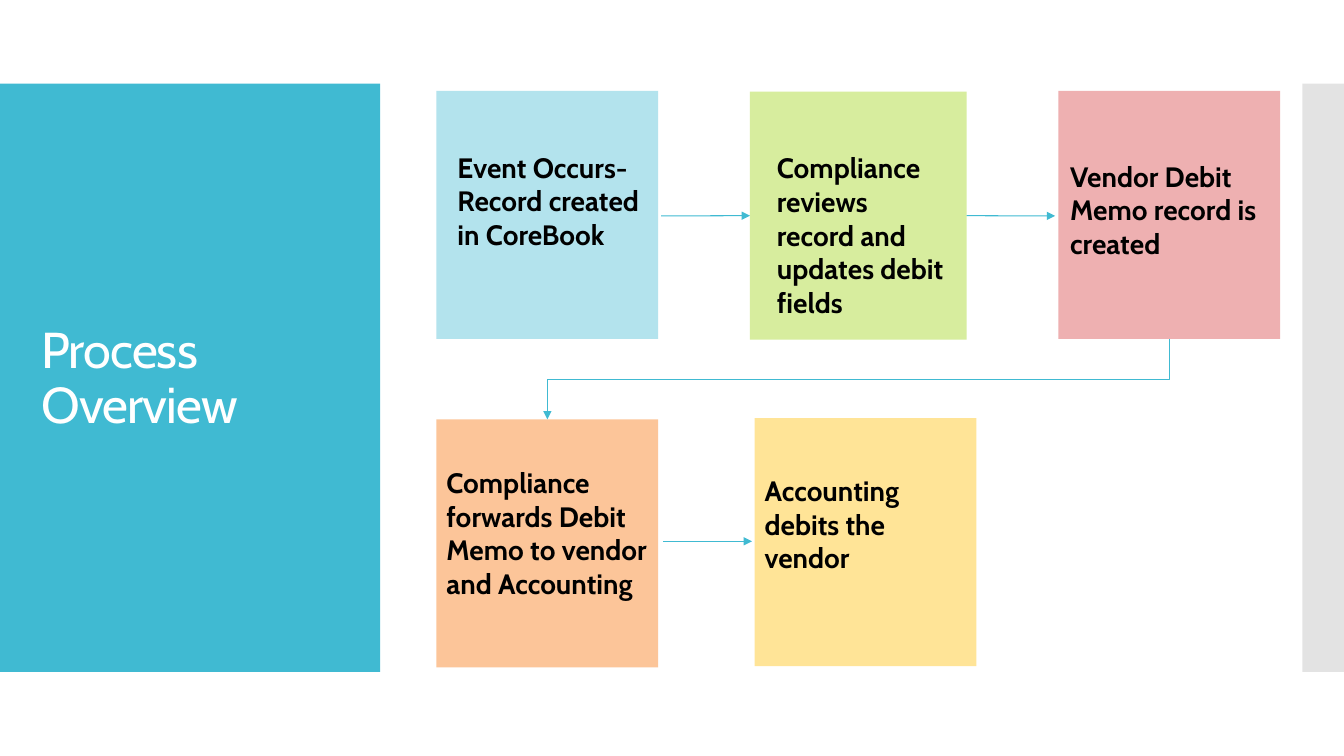
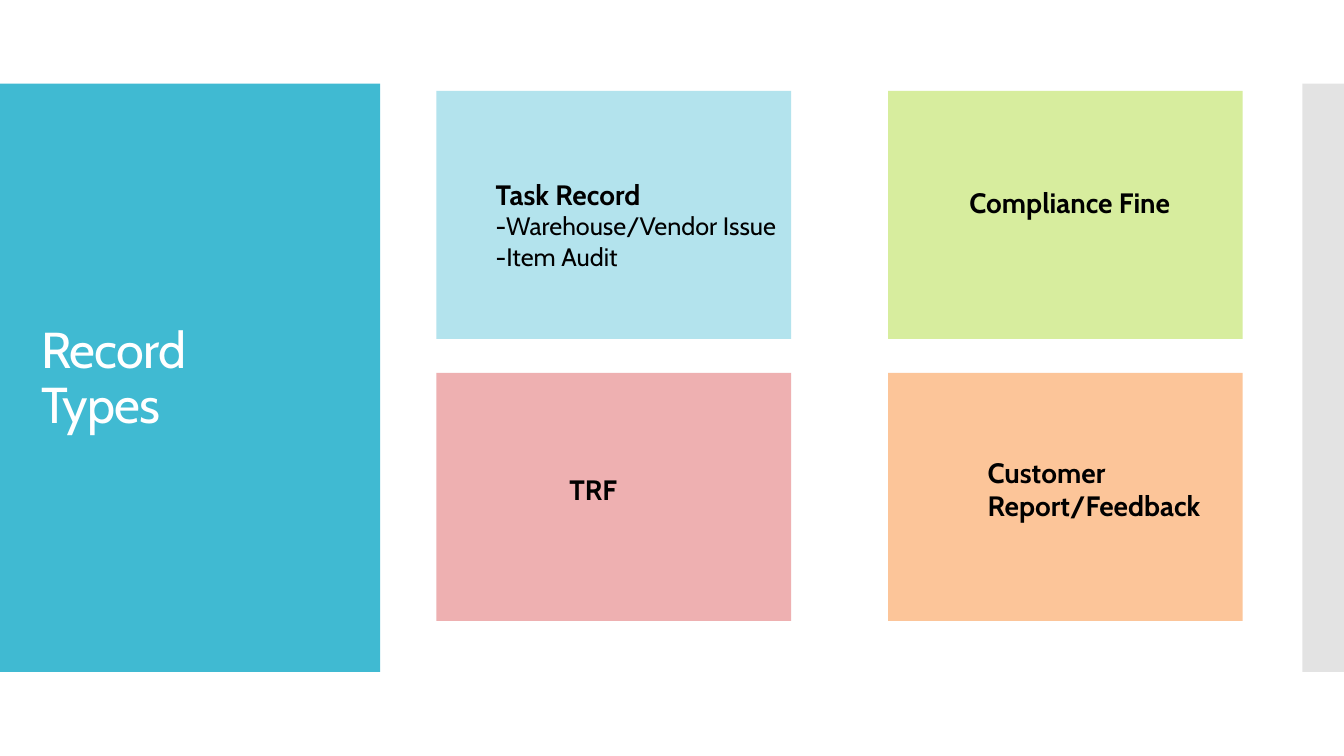
from typing import NamedTuple, Optional

from lxml.etree import SubElement
from pptx import Presentation
from pptx.dml.color import RGBColor
from pptx.enum.shapes import MSO_CONNECTOR, MSO_SHAPE
from pptx.enum.text import MSO_ANCHOR
from pptx.oxml.ns import qn
from pptx.util import Cm, Pt

# Shared look
FONT = "Cabin"
TEAL, GREY, WHITE, BLACK = "40BAD2", "C8C8C8", "FFFFFF", "000000"
SKY, LIME, ROSE, PEACH, SAND = "B3E3ED", "D7ED9E", "EEB0B1", "FCC599", "FFE497"
WIDE, HIGH = 33.87, 19.05
BAND_TOP, BAND_HIGH = 2.11, 14.82
LEFT, TOP, TALL = 11, 2.29, 6.25


class Area(NamedTuple):
    x: float
    y: float
    w: float
    h: float


class Line(NamedTuple):
    text: str
    size: float = 20
    bold: bool = True


class Card(NamedTuple):
    area: Area
    fill: str
    note: Area
    lines: list[Line]


class Joint(NamedTuple):
    shape: object
    side: int


def paint(color, code: str) -> None:
    color.rgb = RGBColor.from_string(code)


def add_rect(slide, area: Area, fill: str, alpha: Optional[int] = None):
    rect = slide.shapes.add_shape(MSO_SHAPE.RECTANGLE, *map(Cm, area))
    rect.shadow.inherit = False
    rect.line.fill.background()
    rect.fill.solid()
    paint(rect.fill.fore_color, fill)
    if alpha is not None:
        tone = rect._element.spPr.find(qn("a:solidFill"))[0]
        SubElement(tone, qn("a:alpha"), val=str(alpha * 1000))
    return rect


def add_text(slide, area: Area, lines: list[Line], *, color: str = BLACK,
             anchor=MSO_ANCHOR.TOP, leading: float = 1.0, track: int = 0) -> None:
    frame = slide.shapes.add_textbox(*map(Cm, area)).text_frame
    frame.word_wrap = True
    frame.vertical_anchor = anchor
    for num, line in enumerate(lines):
        para = frame.add_paragraph() if num else frame.paragraphs[0]
        para.line_spacing = leading
        run = para.add_run()
        run.text = line.text
        run.font.name, run.font.size, run.font.bold = FONT, Pt(line.size), line.bold
        paint(run.font.color, color)
        if track:
            run.font._element.set("spc", str(track))


def add_arrow(slide, start: tuple, end: tuple, *, tail: Optional[Joint] = None,
              head: Optional[Joint] = None, bent: bool = False) -> None:
    kind = MSO_CONNECTOR.ELBOW if bent else MSO_CONNECTOR.STRAIGHT
    link = slide.shapes.add_connector(kind, *map(Cm, (*start, *end)))
    if tail:
        link.begin_connect(tail.shape, tail.side)
    if head:
        link.end_connect(head.shape, head.side)
    link.line.width = Pt(0.75)
    paint(link.line.color, TEAL)
    props = link._element.spPr
    SubElement(props.find(qn("a:ln")), qn("a:tailEnd"), type="triangle")
    SubElement(props, qn("a:effectLst"))
    if bent:
        # Turn the elbow so that it leaves and arrives vertically
        (x1, y1), (x2, y2) = start, end
        wide, high = abs(x2 - x1), abs(y2 - y1)
        link.left, link.top = Cm((x1 + x2 - high) / 2), Cm((y1 + y2 - wide) / 2)
        link.width, link.height = Cm(high), Cm(wide)
        frame = props.find(qn("a:xfrm"))
        frame.attrib.pop("flipH", None)
        frame.set("rot", "5400000")


def add_page(deck, title: str, width: float):
    slide = deck.slides.add_slide(deck.slide_layouts[6])
    add_rect(slide, Area(0, BAND_TOP, 9.58, BAND_HIGH), TEAL)
    add_rect(slide, Area(32.82, BAND_TOP, WIDE - 32.82, BAND_HIGH), GREY, alpha=50)
    add_text(slide, Area(0.79, 3.18, width, 12.78), [Line(title, 36, False)],
             color=WHITE, anchor=MSO_ANCHOR.MIDDLE, leading=0.9, track=-60)
    return slide


def add_cards(slide, cards: list[Card]) -> list:
    rects = [add_rect(slide, card.area, card.fill) for card in cards]
    for card in cards:
        add_text(slide, card.note, card.lines)
    return rects


def add_flow(deck) -> None:
    slide = add_page(deck, "Process Overview", 5.74)
    wide = 5.59
    third, fourth = Area(26.67, TOP, wide, TALL), Area(LEFT, 10.57, wide, TALL)
    steps = [
        Card(Area(LEFT, TOP, wide, TALL), SKY, Area(11.28, 3.66, 5.38, 3.58),
             [Line("Event Occurs-Record created in CoreBook")]),
        Card(Area(18.9, 2.31, 5.46, TALL), LIME, Area(19.33, 3.68, 4.78, 4.52),
             [Line("Compliance reviews record and updates debit fields")]),
        Card(third, ROSE, Area(26.72, 3.89, 5.33, 2.82),
             [Line("Vendor Debit Memo record is created")]),
        Card(fourth, PEACH, Area(LEFT, 11.61, wide, 3.68),
             [Line("Compliance forwards Debit Memo to vendor and Accounting")]),
        Card(Area(19.02, 10.54, wide, TALL), SAND, Area(19.02, 11.81, wide, 2.82),
             [Line("Accounting debits the vendor")]),
    ]
    rects = add_cards(slide, steps)

    # Arrows between the steps
    add_arrow(slide, (16.66, 5.44), (18.9, 5.44), head=Joint(rects[1], 1))
    add_arrow(slide, (24.36, 5.44), (26.59, 5.44), tail=Joint(rects[1], 3))
    add_arrow(slide, (third.x + wide / 2, third.y + TALL),
              (fourth.x + wide / 2, fourth.y),
              tail=Joint(rects[2], 2), head=Joint(rects[3], 0), bent=True)
    add_arrow(slide, (16.71, 13.64), (18.95, 13.64))


def add_types(deck) -> None:
    slide = add_page(deck, "Record Types", 4.72)
    # Two by two grid
    grid = [Area(LEFT + col * 11.38, TOP + row * 7.11, 8.94, TALL)
            for row in range(2) for col in range(2)]
    fills = [SKY, LIME, ROSE, PEACH]
    notes = [Area(12.24, 4.34, 7.72, 3.43), Area(24.18, 4.55, 7.82, 1.12),
             Area(14.1, 11.79, 7.54, 1.12), Area(24.64, 11.35, 8.43, 1.96)]
    texts = [
        [Line("Task Record"), Line("-Warehouse/Vendor Issue", 18, False),
         Line("-Item Audit", 18, False)],
        [Line("Compliance Fine")],
        [Line("TRF")],
        [Line("Customer Report/Feedback")],
    ]
    add_cards(slide, [Card(*row) for row in zip(grid, fills, notes, texts)])


def main() -> None:
    deck = Presentation()
    deck.slide_width, deck.slide_height = Cm(WIDE), Cm(HIGH)
    add_flow(deck)
    add_types(deck)
    deck.save("out.pptx")


if __name__ == "__main__":
    main()
